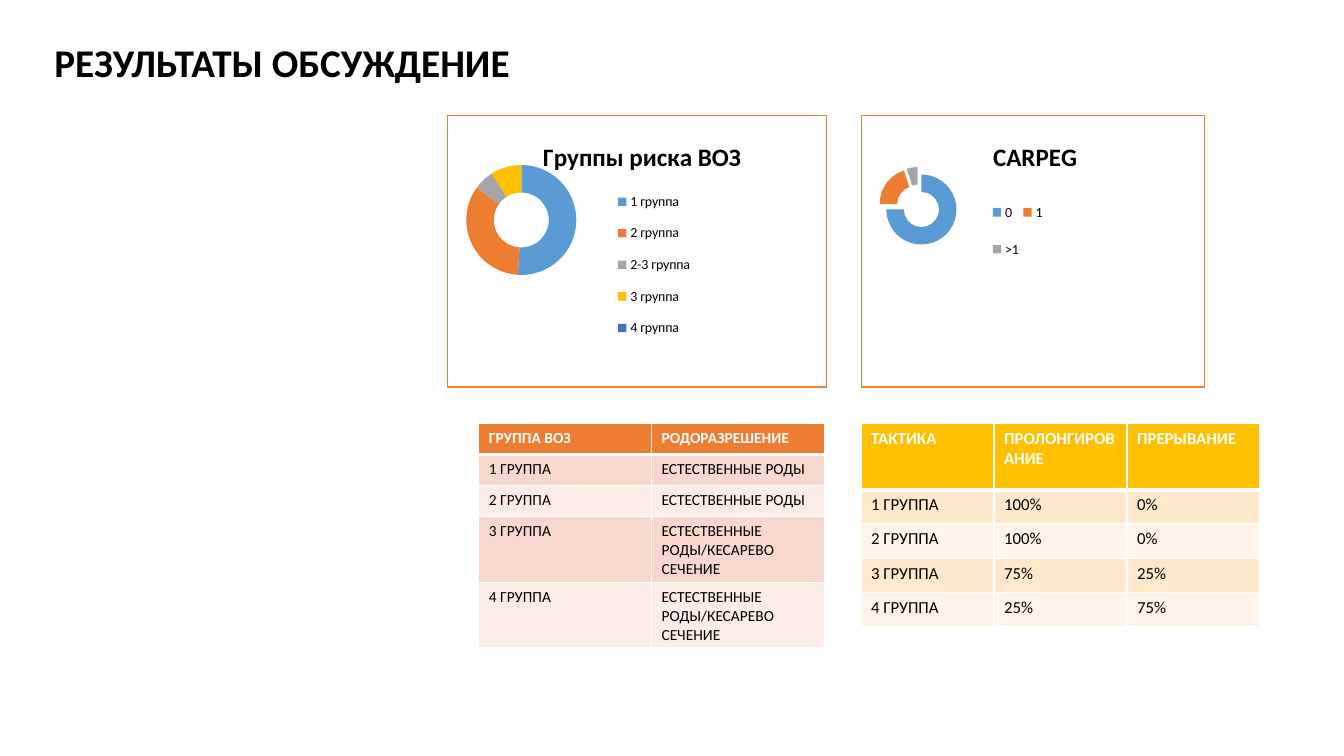
from lxml.etree import SubElement
from pptx import Presentation
from pptx.chart.data import CategoryChartData
from pptx.dml.color import RGBColor
from pptx.enum.chart import XL_CHART_TYPE as ChartType, XL_LEGEND_POSITION as LegendPosition
from pptx.enum.text import MSO_ANCHOR as Anchor
from pptx.oxml import parse_xml
from pptx.oxml.ns import nsdecls, qn
from pptx.util import Pt

FONT = "Calibri"
BLACK = RGBColor(0x00, 0x00, 0x00)
WHITE = RGBColor(0xFF, 0xFF, 0xFF)
BLUE = RGBColor(0x5B, 0x9B, 0xD5)
ORANGE = RGBColor(0xED, 0x7D, 0x31)
GREY = RGBColor(0xA5, 0xA5, 0xA5)
GOLD = RGBColor(0xFF, 0xC0, 0x00)
INDIGO = RGBColor(0x44, 0x72, 0xC4)
ROSE = RGBColor(0xF8, 0xD7, 0xCE)
PALE_ROSE = RGBColor(0xFC, 0xEC, 0xE8)
CREAM = RGBColor(0xFF, 0xE8, 0xCC)
PALE_CREAM = RGBColor(0xFF, 0xF4, 0xE7)
SLICE_COLORS = [BLUE, ORANGE, GREY, GOLD, INDIGO]

RISK_GROUPS = {"1 группа": 51, "2 группа": 34, "2-3 группа": 6, "3 группа": 9, "4 группа": None}
CARPEG_SCORES = {"0": 75, "1": 20, ">1": 5}
DELIVERY_ROWS = [
    ["ГРУППА ВОЗ", "РОДОРАЗРЕШЕНИЕ"],
    ["1 ГРУППА", "ЕСТЕСТВЕННЫЕ РОДЫ"],
    ["2 ГРУППА", "ЕСТЕСТВЕННЫЕ РОДЫ"],
    ["3 ГРУППА", "ЕСТЕСТВЕННЫЕ РОДЫ/КЕСАРЕВО СЕЧЕНИЕ"],
    ["4 ГРУППА", "ЕСТЕСТВЕННЫЕ РОДЫ/КЕСАРЕВО СЕЧЕНИЕ"],
]
TACTICS_ROWS = [
    ["ТАКТИКА", "ПРОЛОНГИРОВАНИЕ", "ПРЕРЫВАНИЕ"],
    ["1 ГРУППА", "100%", "0%"],
    ["2 ГРУППА", "100%", "0%"],
    ["3 ГРУППА", "75%", "25%"],
    ["4 ГРУППА", "25%", "75%"],
]


def style_font(font, size, color, bold):
    font.name, font.size, font.bold = FONT, Pt(size), bold
    font.color.rgb = color


def add_title(slide, box, text):
    frame = slide.shapes.add_textbox(*map(Pt, box)).text_frame
    frame.word_wrap = True
    frame.vertical_anchor = Anchor.MIDDLE
    paragraph = frame.paragraphs[0]
    paragraph.text = text
    paragraph.line_spacing = 0.9
    style_font(paragraph.font, 28, BLACK, True)


def manual_layout(x, y, width=None, height=None, inner=False):
    layout = parse_xml(f"<c:layout {nsdecls('c')}><c:manualLayout/></c:layout>")
    settings = [("layoutTarget", "inner" if inner else None), ("xMode", "edge"), ("yMode", "edge"),
                ("x", x), ("y", y), ("w", width), ("h", height)]
    for tag, value in settings:
        if value is not None:
            SubElement(layout[0], qn(f"c:{tag}")).set("val", str(value))
    return layout


def replace_layout(parent, layout, position):
    for old in parent.findall(qn("c:layout")):
        parent.remove(old)
    parent.insert(position, layout)


def add_doughnut(slide, box, title, shares, title_spot, plot_box, legend_box, explosion=0):
    data = CategoryChartData()
    data.categories = list(shares)
    data.add_series(title, list(shares.values()))
    chart = slide.shapes.add_chart(ChartType.DOUGHNUT, *map(Pt, box), data).chart
    style_font(chart.font, 10, BLACK, False)

    chart.has_title = True
    paragraph = chart.chart_title.text_frame.paragraphs[0]
    paragraph.text = title
    style_font(paragraph.font, 18, BLACK, True)
    chart.has_legend = True
    chart.legend.position = LegendPosition.RIGHT
    chart.legend.include_in_layout = False

    series = chart.plots[0].series[0]
    for index, color in enumerate(SLICE_COLORS[:len(shares)]):
        fill = series.points[index].format.fill
        fill.solid()
        fill.fore_color.rgb = color
    if explosion:
        series_xml = series._element
        series_xml.find(qn("c:tx")).addnext(
            parse_xml(f'<c:explosion {nsdecls("c")} val="{explosion}"/>'))

    chart_space = chart._chartSpace
    replace_layout(chart_space.find(".//" + qn("c:title")), manual_layout(*title_spot), 1)
    replace_layout(chart_space.find(".//" + qn("c:plotArea")), manual_layout(*plot_box, inner=True), 0)
    replace_layout(chart_space.find(".//" + qn("c:legend")), manual_layout(*legend_box), 1)
    chart_space.find(qn("c:chart")).addnext(parse_xml(
        f'<c:spPr {nsdecls("c", "a")}><a:solidFill><a:srgbClr val="{WHITE}"/></a:solidFill>'
        f'<a:ln w="{Pt(1)}"><a:solidFill><a:srgbClr val="{ORANGE}"/></a:solidFill></a:ln></c:spPr>'))


def set_borders(cell, top, bottom):
    properties = cell._tc.get_or_add_tcPr()
    sides = [("L", 1), ("R", 1), ("T", top), ("B", bottom)]
    for position, (side, width) in enumerate(sides):
        properties.insert(position, parse_xml(
            f'<a:ln{side} {nsdecls("a")} w="{Pt(width)}"><a:solidFill>'
            f'<a:srgbClr val="{WHITE}"/></a:solidFill></a:ln{side}>'))


def add_banded_table(slide, box, rows, row_heights, size, header_color, bands):
    left, top, width = box
    table = slide.shapes.add_table(
        len(rows), len(rows[0]), Pt(left), Pt(top), Pt(width), Pt(sum(row_heights))).table
    for column in table.columns:
        column.width = Pt(width / len(rows[0]))
    for index, (texts, height) in enumerate(zip(rows, row_heights)):
        header = index == 0
        table.rows[index].height = Pt(height)
        for column_index, text in enumerate(texts):
            cell = table.cell(index, column_index)
            cell.text = text
            style_font(cell.text_frame.paragraphs[0].font, size, WHITE if header else BLACK, header)
            cell.fill.solid()
            cell.fill.fore_color.rgb = header_color if header else bands[(index - 1) % 2]
            set_borders(cell, 3 if index == 1 else 1, 3 if header else 1)


def main():
    presentation = Presentation()
    presentation.slide_width, presentation.slide_height = Pt(960), Pt(540)
    slide = presentation.slides.add_slide(presentation.slide_layouts[6])
    add_title(slide, (31.7, 16.6, 404.6, 59.8), "РЕЗУЛЬТАТЫ ОБСУЖДЕНИЕ")
    add_doughnut(slide, (319, 82, 272, 195), "Группы риска ВОЗ", RISK_GROUPS,
                 (0.24, 0.07), (0.05, 0.18, 0.29, 0.41), (0.42, 0.23, 0.25, 0.64))
    add_doughnut(slide, (615, 82, 246, 195), "CARPEG", CARPEG_SCORES,
                 (0.37, 0.07), (0.05, 0.13, 0.23, 0.41), (0.37, 0.25, 0.17, 0.35), explosion=25)
    add_banded_table(slide, (342, 302.4, 247), DELIVERY_ROWS, [22.2] * 3 + [36] * 2,
                     11, ORANGE, (ROSE, PALE_ROSE))
    add_banded_table(slide, (615, 302.4, 285), TACTICS_ROWS, [47.4] + [24.5] * 4,
                     12, GOLD, (CREAM, PALE_CREAM))
    presentation.save("out.pptx")


if __name__ == "__main__":
    main()
